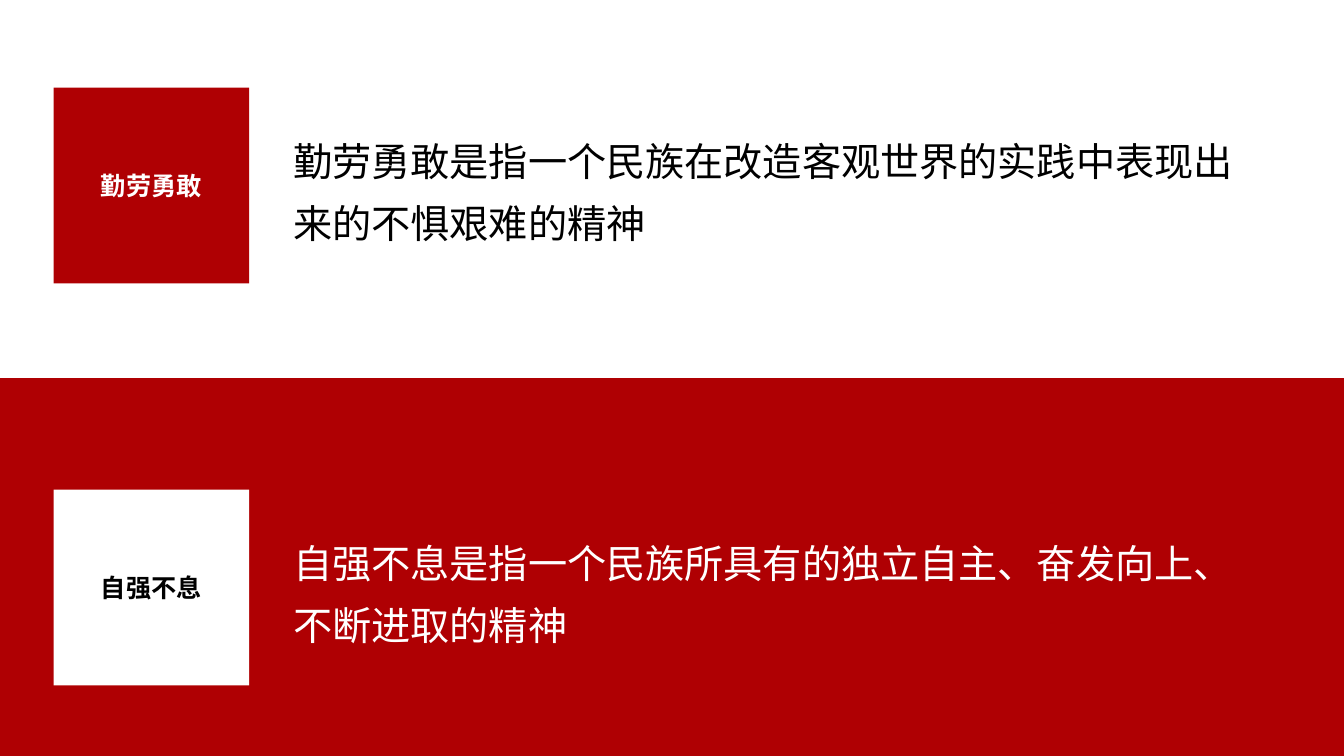
from dataclasses import dataclass

from lxml import etree
from pptx import Presentation
from pptx.dml.color import RGBColor
from pptx.enum.shapes import MSO_SHAPE
from pptx.enum.text import MSO_ANCHOR, PP_ALIGN
from pptx.oxml.ns import qn
from pptx.util import Cm, Pt

RECTANGLE = MSO_SHAPE.RECTANGLE
MIDDLE, TOP = MSO_ANCHOR.MIDDLE, MSO_ANCHOR.TOP
CENTER, LEFT = PP_ALIGN.CENTER, PP_ALIGN.LEFT


@dataclass(frozen=True)
class Theme:
    red: str = "AF0003"
    white: str = "FFFFFF"
    black: str = "000000"
    font: str = "Noto Sans CJK SC"
    label_size: int = 18
    meaning_size: int = 28


THEME = Theme()

# Content: label, meaning, tile colour, label colour, meaning colour, tile top (cm)
VIRTUES = [
    ("勤劳勇敢", "勤劳勇敢是指一个民族在改造客观世界的实践中表现出来的不惧艰难的精神",
     THEME.red, THEME.white, THEME.black, 2.21),
    ("自强不息", "自强不息是指一个民族所具有的独立自主、奋发向上、不断进取的精神",
     THEME.white, THEME.black, THEME.white, 12.34),
]

# Layout in cm
SLIDE_WIDTH, SLIDE_HEIGHT = 33.87, 19.05
TILE_LEFT, TILE_SIZE = 1.35, 4.93
MEANING_LEFT, MEANING_WIDTH, MEANING_HEIGHT = 7.14, 25.07, 3.37
MEANING_DROP = 0.78


def add_block(slide, left, top, width, height, color):
    block = slide.shapes.add_shape(RECTANGLE, Cm(left), Cm(top), Cm(width), Cm(height))
    block.shadow.inherit = False
    block.fill.solid()
    block.fill.fore_color.rgb = RGBColor.from_string(color)
    block.line.fill.background()
    return block


def write(frame, text, size, color, bold, align, anchor):
    frame.word_wrap = True
    frame.vertical_anchor = anchor
    paragraph = frame.paragraphs[0]
    paragraph.alignment = align
    run = paragraph.add_run()
    run.text = text
    run.font.size = Pt(size)
    run.font.bold = bold
    run.font.color.rgb = RGBColor.from_string(color)
    run.font.name = THEME.font
    # Chinese characters take the East Asian typeface
    etree.SubElement(run.font._element, qn("a:ea"), typeface=THEME.font)
    return paragraph


def main():
    prs = Presentation()
    prs.slide_width, prs.slide_height = Cm(SLIDE_WIDTH), Cm(SLIDE_HEIGHT)
    slide = prs.slides.add_slide(prs.slide_layouts[6])

    # Red lower half
    half = SLIDE_HEIGHT / 2
    add_block(slide, 0, half, SLIDE_WIDTH, half, THEME.red)

    # One tile and its meaning per virtue
    for label, meaning, tile_color, label_color, meaning_color, top in VIRTUES:
        tile = add_block(slide, TILE_LEFT, top, TILE_SIZE, TILE_SIZE, tile_color)
        write(tile.text_frame, label, THEME.label_size, label_color, True, CENTER, MIDDLE)

        meaning_box = slide.shapes.add_textbox(
            Cm(MEANING_LEFT), Cm(top + MEANING_DROP), Cm(MEANING_WIDTH), Cm(MEANING_HEIGHT))
        paragraph = write(meaning_box.text_frame, meaning, THEME.meaning_size,
                          meaning_color, False, LEFT, TOP)
        paragraph.line_spacing = 1.3

    prs.save("out.pptx")


if __name__ == "__main__":
    main()
